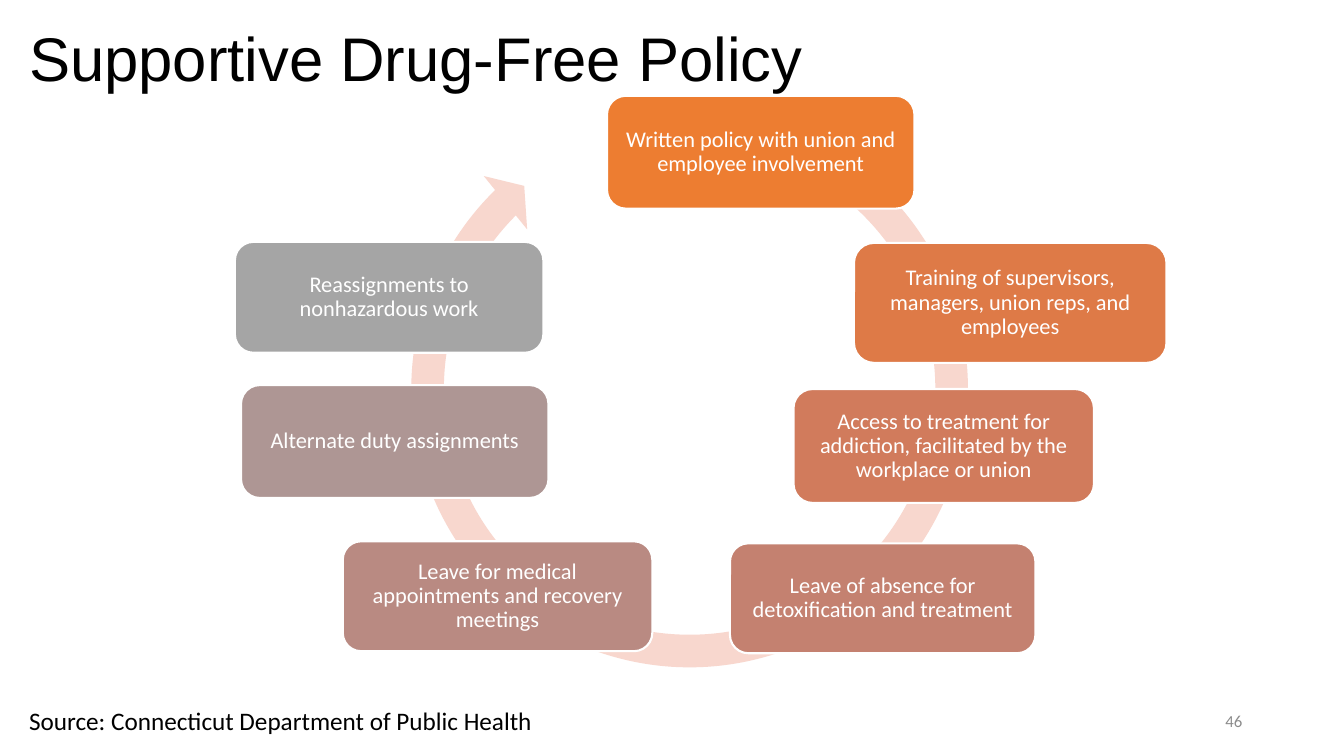
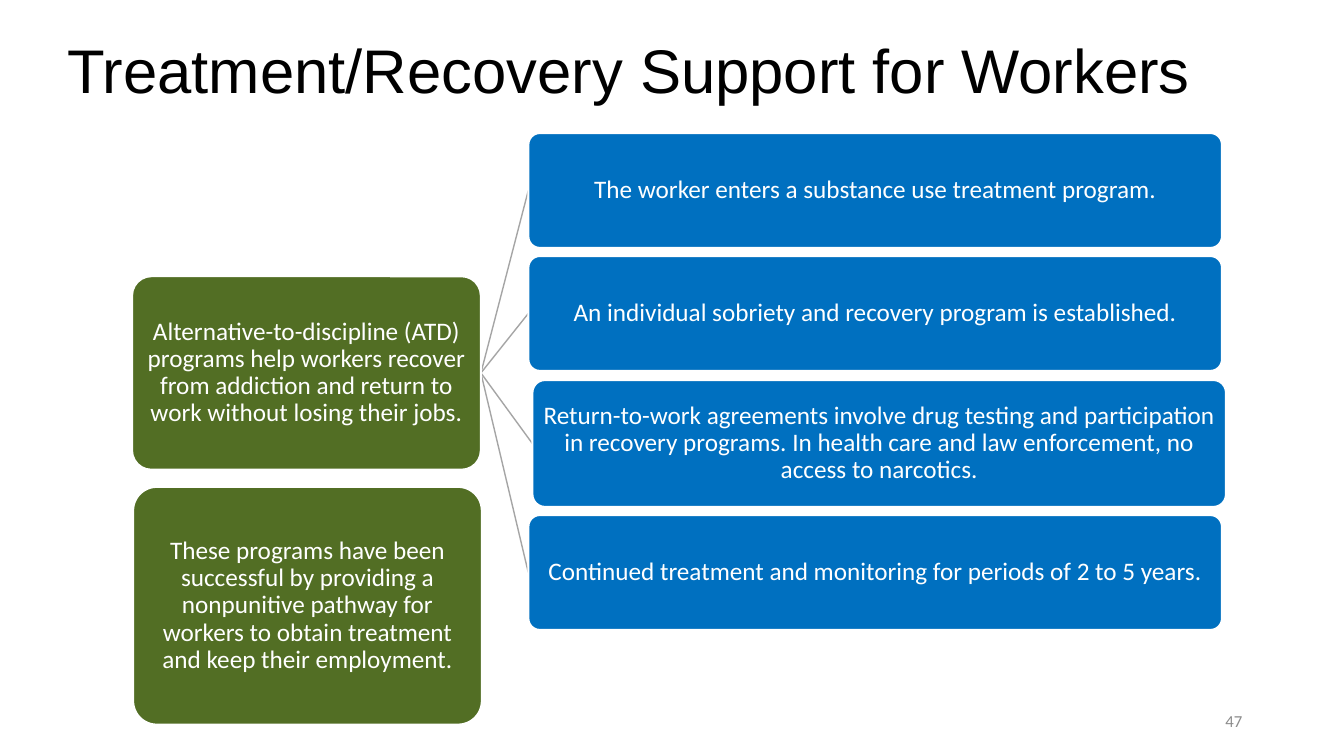
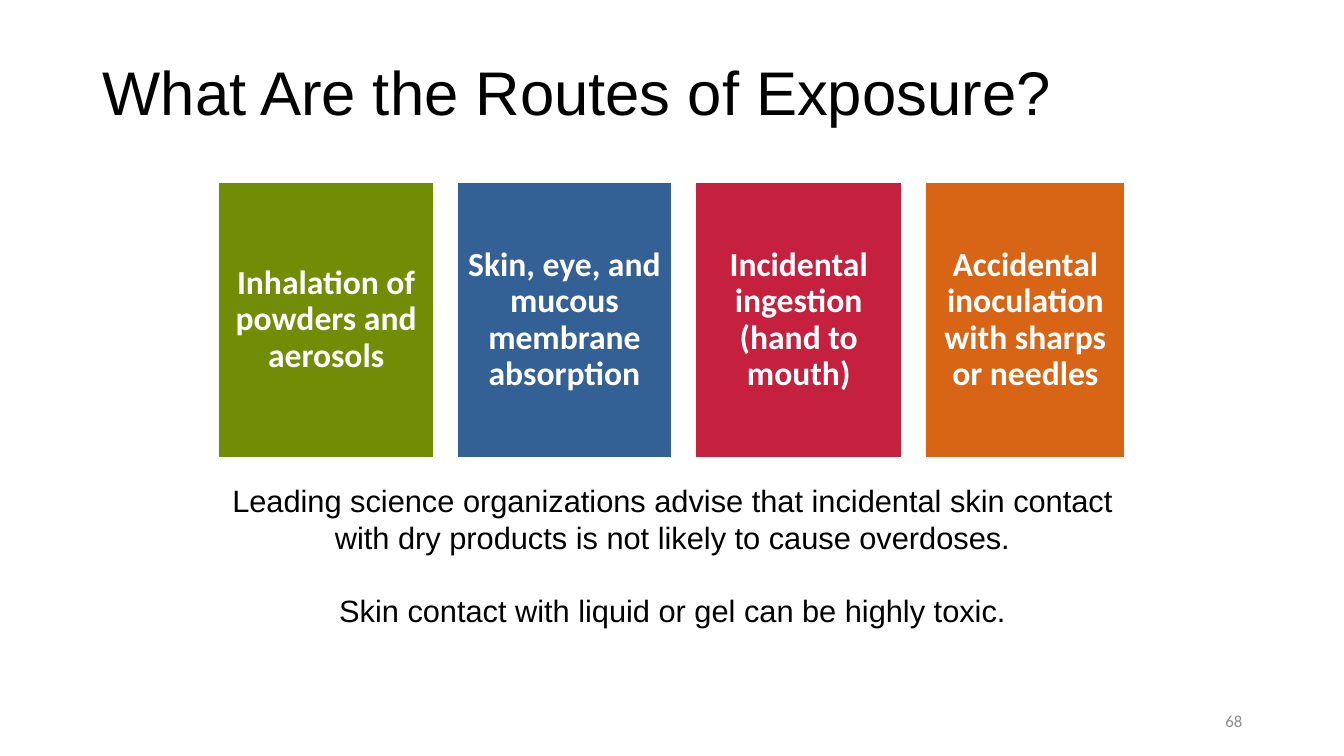
from pptx import Presentation
from pptx.dml.color import RGBColor
from pptx.enum.shapes import MSO_CONNECTOR as Line, MSO_SHAPE as Shape
from pptx.enum.text import MSO_ANCHOR as Anchor, PP_ALIGN as Align
from pptx.util import Inches, Pt
from lxml import etree

COLORS = {
    "ink": "000000", "white": "FFFFFF", "number": "8C8C8C",
    "ring": "F8D7CE", "link": "A5A5A5",
    "program": "526E24", "step": "0070C0",
    "policy": "ED7D31", "training": "DE7A47", "access": "D17B5C",
    "absence": "C48170", "appointments": "B98A82",
    "alternate": "AE9694", "reassign": "A5A5A5",
    "inhalation": "708D05", "absorption": "346195",
    "ingestion": "C5203E", "inoculation": "D86516",
}
HEADING_FONT, BODY_FONT = "Arial", "Calibri"
DRAWING_NS = "http://schemas.openxmlformats.org/drawingml/2006/main"


def rgb(name):
    return RGBColor.from_string(COLORS[name])


def write(frame, paragraphs, size, color="ink", font=BODY_FONT, align=Align.LEFT,
          anchor=Anchor.MIDDLE, spacing=1.0, bold=False, gap=0):
    """Fill a text frame; gap is the space in points between paragraphs."""
    frame.word_wrap = True
    frame.vertical_anchor = anchor
    for index, wording in enumerate(paragraphs):
        paragraph = frame.add_paragraph() if index else frame.paragraphs[0]
        paragraph.text = wording
        paragraph.alignment = align
        paragraph.line_spacing = spacing
        if index:
            paragraph.space_before = Pt(gap)
        paragraph.font.name = font
        paragraph.font.size = Pt(size)
        paragraph.font.bold = bold
        paragraph.font.color.rgb = rgb(color)


def add_text(slide, box, paragraphs, size, **style):
    label = slide.shapes.add_textbox(*map(Inches, box))
    write(label.text_frame, paragraphs, size, **style)


def add_panel(slide, kind, box, fill, outline=None):
    panel = slide.shapes.add_shape(kind, *map(Inches, box))
    panel.shadow.inherit = False
    panel.fill.solid()
    panel.fill.fore_color.rgb = rgb(fill)
    if outline:
        panel.line.color.rgb = rgb("white")
        panel.line.width = Pt(outline)
    else:
        panel.line.fill.background()
    return panel


def add_card(slide, box, fill, wording, size, margin, kind=Shape.ROUNDED_RECTANGLE,
             corner=None, outline=1.5, bold=False):
    """Coloured box with centred white text."""
    card = add_panel(slide, kind, box, fill, outline)
    if corner is not None:
        card.adjustments[0] = corner
    frame = card.text_frame
    frame.margin_left = frame.margin_right = Inches(margin)
    frame.margin_top = frame.margin_bottom = Inches(margin)
    write(frame, [wording], size, color="white", align=Align.CENTER,
          spacing=0.9, bold=bold)


def add_link(slide, start, end):
    link = slide.shapes.add_connector(Line.STRAIGHT, *map(Inches, start + end))
    link.line.color.rgb = rgb("link")
    link.line.width = Pt(1)
    etree.SubElement(link._element.spPr, f"{{{DRAWING_NS}}}effectLst")


def start_slide(deck, title, title_box, number):
    """Blank slide with the shared title style and page number."""
    slide = deck.slides.add_slide(deck.slide_layouts[6])
    add_text(slide, title_box, [title], 44, font=HEADING_FONT, spacing=0.9)
    add_text(slide, (9.42, 6.95, 3, 0.4), [number], 12, color="number",
             align=Align.RIGHT)
    return slide


def policy_cycle(slide, box):
    """Ring arrow with seven policy cards, placed from the ring's corner."""
    left, top, width, height = box
    ring = add_panel(slide, Shape.CIRCULAR_ARROW, box, "ring")
    for index, value in enumerate((0.055, 3.307, 135.208, 175.433, 0.058)):
        ring.adjustments[index] = value

    cards = [
        (2.12, 0.03, 3.05, 1.12, "policy",
         "Written policy with union and employee involvement"),
        (4.57, 1.49, 3.1, 1.19, "training",
         "Training of supervisors, managers, union reps, and employees"),
        (3.97, 2.94, 2.98, 1.13, "access",
         "Access to treatment for addiction, facilitated by the workplace or union"),
        (3.34, 4.47, 3.03, 1.09, "absence",
         "Leave of absence for detoxification and treatment"),
        (-0.5, 4.45, 3.07, 1.09, "appointments",
         "Leave for medical appointments and recovery meetings"),
        (-1.51, 2.9, 3.05, 1.12, "alternate", "Alternate duty assignments"),
        (-1.57, 1.48, 3.06, 1.1, "reassign", "Reassignments to nonhazardous work"),
    ]
    for dx, dy, card_width, card_height, fill, wording in cards:
        add_card(slide, (left + dx, top + dy, card_width, card_height),
                 fill, wording, 16, margin=0.07)


def support_tree(slide, box):
    """Program cards on the left, linked to treatment steps on the right."""
    left, top, width, height = box
    program_width, step_width = 3.46, 6.88
    programs = [
        (0, 1.42, 1.92, "Alternative-to-discipline (ATD) programs help workers recover "
         "from addiction and return to work without losing their jobs."),
        (0.01, 3.51, 2.36, "These programs have been successful by providing a nonpunitive "
         "pathway for workers to obtain treatment and keep their employment."),
    ]
    steps = [
        (3.93, 0, 1.14, "The worker enters a substance use treatment program."),
        (3.93, 1.22, 1.14, "An individual sobriety and recovery program is established."),
        (3.97, 2.45, 1.26, "Return-to-work agreements involve drug testing and participation "
         "in recovery programs. In health care and law enforcement, no access to narcotics."),
        (3.93, 3.79, 1.14, "Continued treatment and monitoring for periods of 2 to 5 years."),
    ]

    # Links fan out from the first program to the middle of each step
    hub_x, hub_y, hub_height, _ = programs[0]
    hub = (left + hub_x + program_width, top + hub_y + hub_height / 2)
    for dx, dy, step_height, _ in steps:
        add_link(slide, hub, (left + dx, top + dy + step_height / 2))

    for cards, card_width, fill in ((programs, program_width, "program"),
                                    (steps, step_width, "step")):
        for dx, dy, card_height, wording in cards:
            add_card(slide, (left + dx, top + dy, card_width, card_height),
                     fill, wording, 18, margin=0.01, corner=0.1)


def route_row(slide, box):
    """Row of exposure routes with equal gaps."""
    left, top, width, height = box
    routes = [
        (2.13, "inhalation", "Inhalation of powders and aerosols"),
        (2.13, "absorption", "Skin, eye, and mucous membrane absorption"),
        (2.05, "ingestion", "Incidental ingestion (hand to mouth)"),
        (1.98, "inoculation", "Accidental inoculation with sharps or needles"),
    ]
    gap = (width - sum(route[0] for route in routes)) / (len(routes) - 1)
    for route_width, fill, wording in routes:
        add_card(slide, (left, top, route_width, height), fill, wording, 24,
                 margin=0.1, kind=Shape.RECTANGLE, outline=1, bold=True)
        left += route_width + gap


def main():
    deck = Presentation()
    deck.slide_width, deck.slide_height = Inches(13.33), Inches(7.5)

    # Policy cycle
    policy = start_slide(deck, "Supportive Drug-Free Policy",
                         (0.19, -0.11, 11.5, 1.45), "46")
    policy_cycle(policy, (3.9, 0.92, 5.88, 5.88))
    add_text(policy, (0.19, 6.95, 6.71, 0.4),
             ["Source: Connecticut Department of Public Health"], 18, anchor=Anchor.TOP)

    # Treatment and recovery
    support = start_slide(deck, "Treatment/Recovery Support for Workers",
                          (0.57, 0, 11.5, 1.45), "47")
    support_tree(support, (1.31, 1.32, 10.85, 5.87))

    # Routes of exposure
    exposure = start_slide(deck, "What Are the Routes of Exposure?",
                           (0.92, 0.68, 10.25, 0.53), "68")
    route_row(exposure, (2.17, 1.81, 8.99, 2.73))
    add_text(exposure, (2.17, 4.73, 9, 1.58),
             ["Leading science organizations advise that incidental skin contact "
              "with dry products is not likely to cause overdoses.",
              "Skin contact with liquid or gel can be highly toxic."],
             22, font=HEADING_FONT, align=Align.CENTER, anchor=Anchor.TOP, gap=26)

    deck.save("out.pptx")


if __name__ == "__main__":
    main()
